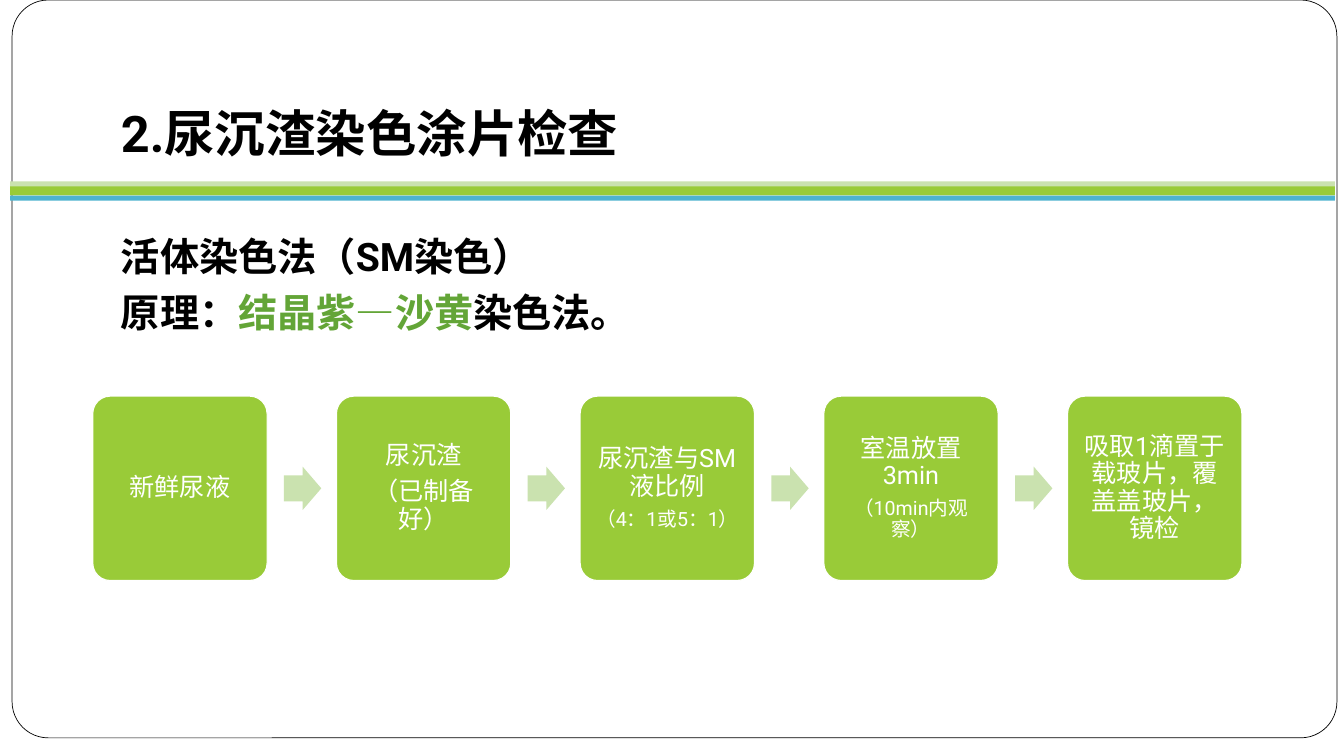
import dataclasses

import lxml.etree
import pptx
import pptx.dml.color
import pptx.enum.shapes
import pptx.enum.text
import pptx.oxml.ns
import pptx.util

Inches = pptx.util.Inches
Pt = pptx.util.Pt
SHAPE = pptx.enum.shapes.MSO_SHAPE
ALIGN = pptx.enum.text.PP_ALIGN
ANCHOR = pptx.enum.text.MSO_ANCHOR


@dataclasses.dataclass(frozen=True)
class Theme:
    font: str = "Roboto"
    asian: str = "Noto Sans CJK SC"
    black: str = "000000"
    white: str = "FFFFFF"
    green: str = "99CB38"
    pale: str = "CAE2AF"
    blue: str = "4EB3CF"
    accent: str = "63A537"
    title: int = 36
    body: int = 28
    step: int = 18
    note: int = 14


class Deck:
    def __init__(self, theme):
        self.theme = theme
        self.file = pptx.Presentation()
        self.file.slide_width = Inches(13.33)
        self.file.slide_height = Inches(7.5)
        self.slide = self.file.slides.add_slide(self.file.slide_layouts[1])

    def tint(self, color):
        return pptx.dml.color.RGBColor.from_string(color)

    def shape(self, kind, box, fill, line=None, width=0.5, adjust=()):
        shape = self.slide.shapes.add_shape(kind, *map(Inches, box))
        shape.shadow.inherit = False
        shape.fill.solid()
        shape.fill.fore_color.rgb = self.tint(fill)
        if line:
            shape.line.color.rgb = self.tint(line)
            shape.line.width = Pt(width)
        else:
            shape.line.fill.background()
        for index, value in enumerate(adjust):
            shape.adjustments[index] = value
        return shape

    def style(self, para, size, color, bold=False, align=ALIGN.LEFT):
        para.alignment = align
        para.space_before = Pt(0)
        para.font.name = self.theme.font
        para.font.size = Pt(size)
        para.font.bold = bold
        para.font.color.rgb = self.tint(color)
        latin = para.font._element.find(pptx.oxml.ns.qn("a:latin"))
        asian = lxml.etree.Element(pptx.oxml.ns.qn("a:ea"), typeface=self.theme.asian)
        latin.addnext(asian)

    def holder(self, index, box):
        holder = self.slide.placeholders[index]
        holder.left, holder.top, holder.width, holder.height = map(Inches, box)
        self.slide.shapes._spTree.append(holder._element)
        frame = holder.text_frame
        frame.word_wrap = True
        frame.auto_size = pptx.enum.text.MSO_AUTO_SIZE.NONE
        return frame

    def title(self, text, box):
        frame = self.holder(0, box)
        frame.vertical_anchor = ANCHOR.BOTTOM
        frame.margin_bottom = Inches(0.1)
        frame.text = text
        self.style(frame.paragraphs[0], self.theme.title, self.theme.black, True)

    def body(self, lines, box):
        frame = self.holder(1, box)
        for index, parts in enumerate(lines):
            para = frame.add_paragraph() if index else frame.paragraphs[0]
            props = para._p.get_or_add_pPr()
            props.set("marL", "0")
            props.set("indent", "0")
            lxml.etree.SubElement(props, pptx.oxml.ns.qn("a:buNone"))
            para.line_spacing = 1.2
            self.style(para, self.theme.body, self.theme.black, True)
            for text, color in parts:
                run = para.add_run()
                run.text = text
                if color:
                    run.font.color.rgb = self.tint(color)

    def step(self, lines, box):
        theme = self.theme
        card = self.shape(SHAPE.ROUNDED_RECTANGLE, box, theme.green, theme.white, 0.85, [0.1])
        frame = card.text_frame
        frame.word_wrap = True
        frame.vertical_anchor = ANCHOR.MIDDLE
        frame.margin_left = frame.margin_right = Inches(0.07)
        frame.margin_top = frame.margin_bottom = Inches(0.07)
        for index, (text, size) in enumerate(lines):
            para = frame.add_paragraph() if index else frame.paragraphs[0]
            para.text = text
            para.line_spacing = 0.9
            para.space_after = Pt(0.35 * size)
            self.style(para, size, theme.white, align=ALIGN.CENTER)

    def arrow(self, box):
        self.shape(SHAPE.RIGHT_ARROW, box, self.theme.pale, adjust=[0.6, 0.5])


def main():
    theme = Theme()
    deck = Deck(theme)
    deck.shape(SHAPE.ROUNDED_RECTANGLE, (0.12, 0, 13.14, 7.32), theme.white,
               theme.black, adjust=[0.049])
    bands = [(1.84, 0.1, theme.green), (1.8, 0.05, theme.pale), (1.94, 0.05, theme.blue)]
    for top, height, color in bands:
        deck.shape(SHAPE.RECTANGLE, (0.1, top, 13.14, height), color)

    deck.title("2.尿沉渣染色涂片检查", (1.1, 0.22, 11.33, 1.49))
    deck.body([
        [("活体染色法（SM染色）", None)],
        [("原理：", None), ("结晶紫—沙黄", theme.accent), ("染色法。", None)],
    ], (1.1, 2.16, 11.33, 1.12))

    steps = [
        [("新鲜尿液", theme.step)],
        [("尿沉渣", theme.step), ("（已制备好）", theme.step)],
        [("尿沉渣与SM液比例", theme.step), ("（4：1或5：1）", theme.note)],
        [("室温放置3min", theme.step), ("（10min内观察）", theme.note)],
        [("吸取1滴置于载玻片，覆盖盖玻片，镜检", theme.step)],
    ]
    left, pitch = 0.92, 2.417
    for index, lines in enumerate(steps):
        start = left + index * pitch
        if index:
            deck.arrow((start - 0.52, 4.63, 0.37, 0.43))
        deck.step(lines, (start, 3.93, 1.73, 1.83))
    deck.file.save("out.pptx")


if __name__ == "__main__":
    main()
